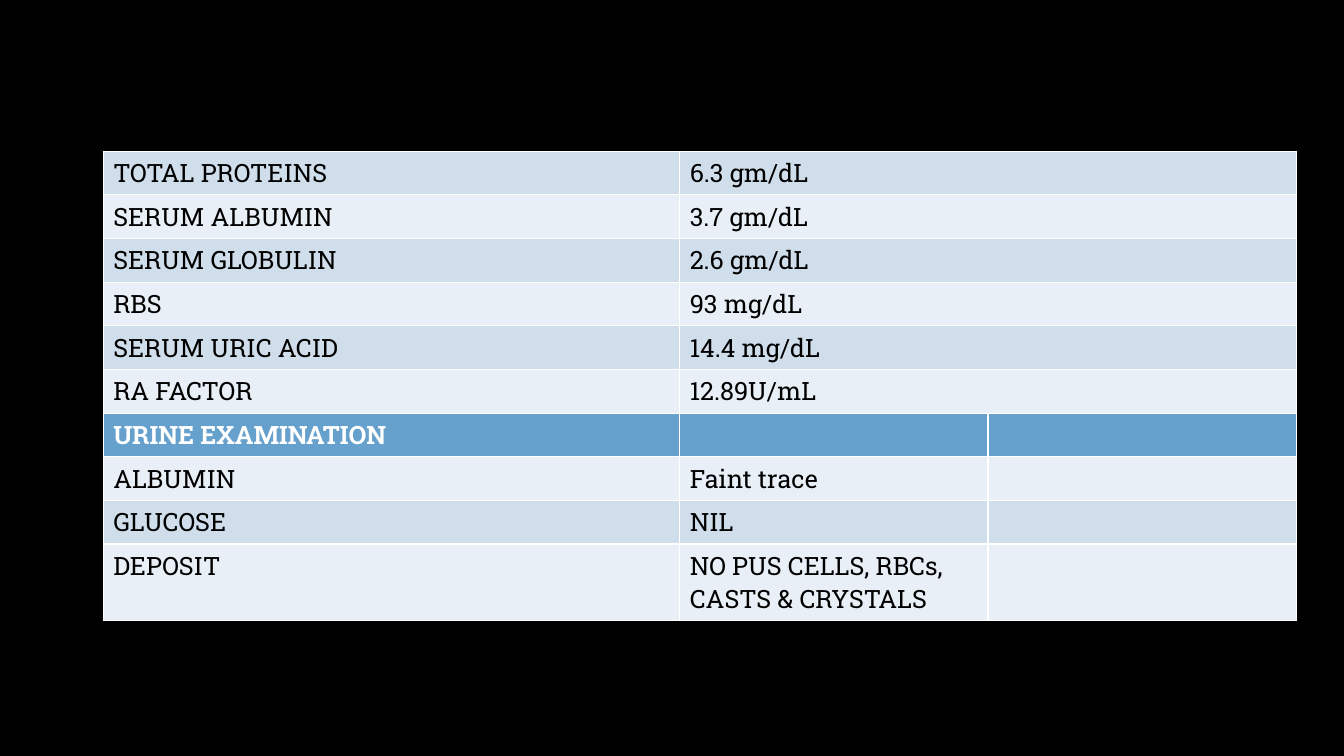
from lxml.etree import SubElement
from pptx import Presentation
from pptx.dml.color import RGBColor as Rgb
from pptx.oxml import parse_xml
from pptx.oxml.ns import nsdecls, qn
from pptx.util import Cm, Pt

COLORS = {
    "back": "000000",
    "text": "000000",
    "white": "FFFFFF",
    "head": "65A1CC",
    "dark": "D0DEEC",
    "light": "E9EFF6",
}

BLOOD = [
    ("TOTAL PROTEINS", "6.3 gm/dL"),
    ("SERUM ALBUMIN", "3.7 gm/dL"),
    ("SERUM GLOBULIN", "2.6 gm/dL"),
    ("RBS", "93 mg/dL"),
    ("SERUM URIC ACID", "14.4 mg/dL"),
    ("RA FACTOR", "12.89U/mL"),
]
URINE = [
    ("URINE EXAMINATION", ""),
    ("ALBUMIN", "Faint trace"),
    ("GLUCOSE", "NIL"),
    ("DEPOSIT", "NO PUS CELLS, RBCs, CASTS & CRYSTALS"),
]


class Deck:
    font = "Roboto Slab"
    size = Pt(18)

    def __init__(self):
        self.prs = Presentation()
        self.prs.slide_width, self.prs.slide_height = Cm(33.87), Cm(19.05)
        self.slide = self.prs.slides.add_slide(self.prs.slide_layouts[6])
        fill = self.slide.background.fill
        fill.solid()
        fill.fore_color.rgb = self.color("back")

    def color(self, name):
        return Rgb.from_string(COLORS[name])

    def border(self, cell):
        props = cell._tc.get_or_add_tcPr()
        for spot, side in enumerate("LRTB"):
            line = parse_xml(f'<a:ln{side} {nsdecls("a")} w="{Pt(1)}"/>')
            paint = SubElement(line, qn("a:solidFill"))
            SubElement(paint, qn("a:srgbClr"), val=COLORS["white"])
            props.insert(spot, line)

    def cell(self, cell, text, fill, ink="text", bold=False):
        cell.fill.solid()
        cell.fill.fore_color.rgb = self.color(fill)
        self.border(cell)
        if text:
            run = cell.text_frame.paragraphs[0].add_run()
            run.text = text
            font = run.font
            font.name, font.size, font.bold = self.font, self.size, bold
            font.color.rgb = self.color(ink)

    def table(self, left, top, widths, height, rows, joined):
        """Draw the rows; the first `joined` ones merge their last two cells."""
        grid = self.slide.shapes.add_table(
            len(rows), len(widths), Cm(left), Cm(top),
            Cm(sum(widths)), Cm(height * len(rows))).table
        grid.first_row = False
        for col, width in zip(grid.columns, widths):
            col.width = Cm(width)
        for i, (name, value) in enumerate(rows):
            grid.rows[i].height = Cm(height)
            if i == joined:
                style = ("head", "white", True)
            else:
                style = ("light" if i % 2 else "dark",)
            for j, text in enumerate((name, value, "")):
                self.cell(grid.cell(i, j), text, *style)
            if i < joined:
                grid.cell(i, 1).merge(grid.cell(i, 2))


def main():
    deck = Deck()
    deck.table(2.6, 3.81, (14.53, 7.77, 7.77), 1.1, BLOOD + URINE, len(BLOOD))
    deck.prs.save("out.pptx")


if __name__ == "__main__":
    main()
